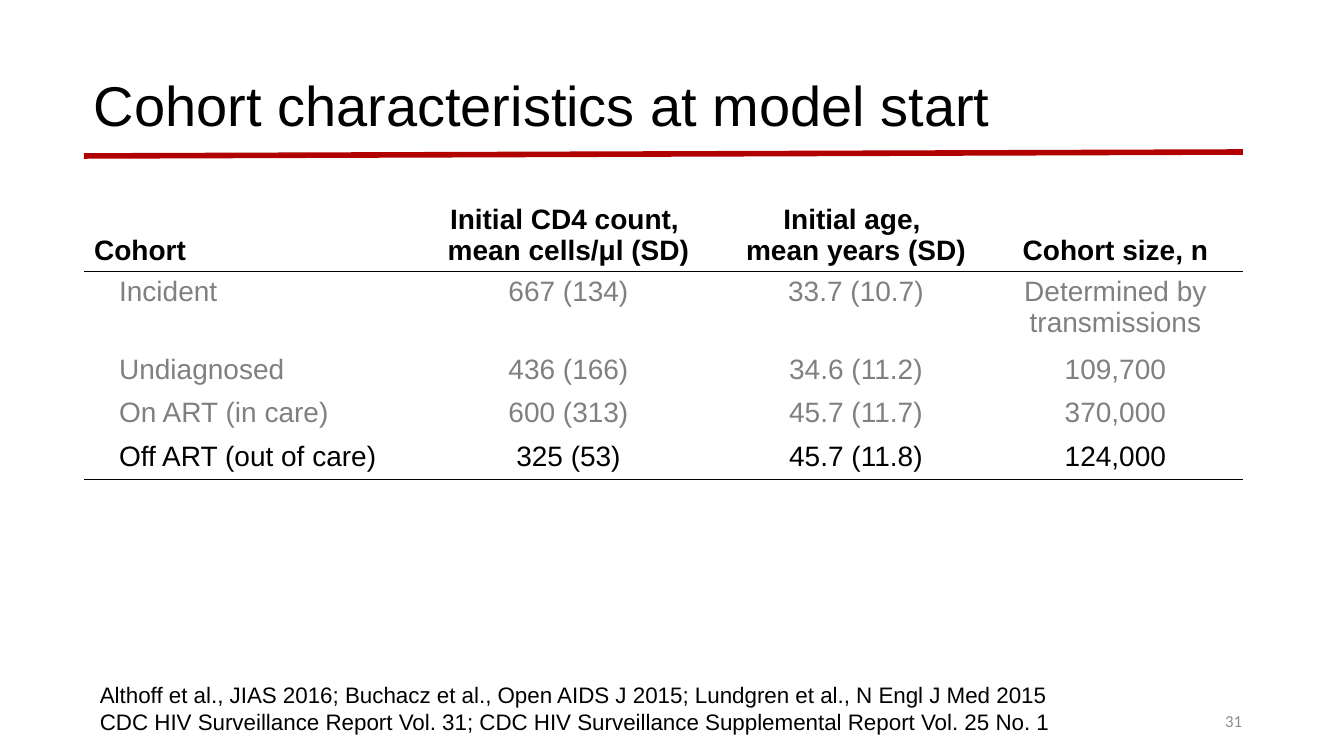
from lxml import etree
from pptx import Presentation
from pptx.dml.color import RGBColor
from pptx.enum.shapes import MSO_CONNECTOR
from pptx.enum.text import MSO_ANCHOR, PP_ALIGN
from pptx.oxml.ns import qn
from pptx.util import Pt

LEFT, CENTER, RIGHT = PP_ALIGN.LEFT, PP_ALIGN.CENTER, PP_ALIGN.RIGHT
TOP, MIDDLE, BOTTOM = MSO_ANCHOR.TOP, MSO_ANCHOR.MIDDLE, MSO_ANCHOR.BOTTOM
STRAIGHT = MSO_CONNECTOR.STRAIGHT
PX = 914400 / 100.8  # EMU in one px

THEME = {
    "font": "Arial", "number_font": "Calibri",
    "black": "000000", "muted": "808080", "number": "8C8C8C", "rule": "B00000",
    "title_size": 40, "table_size": 20, "source_size": 16, "number_size": 12,
}


def px(*lengths):
    return [round(length * PX) for length in lengths]


def write_text(frame, text, size, color=THEME["black"], font=THEME["font"],
               bold=False, align=LEFT, anchor=TOP, indent=0, spacing=None):
    frame.word_wrap = True
    frame.vertical_anchor = anchor
    for index, line in enumerate(text.split("\n")):
        paragraph = frame.paragraphs[0] if index == 0 else frame.add_paragraph()
        paragraph.alignment = align
        paragraph.line_spacing = spacing
        if indent:
            properties = paragraph._p.get_or_add_pPr()
            properties.set("marL", "0")
            properties.set("indent", str(px(indent)[0]))
        run = paragraph.add_run()
        run.text = line
        run.font.name, run.font.size, run.font.bold = font, Pt(size), bold
        run.font.color.rgb = RGBColor.from_string(color)


presentation = Presentation()
presentation.slide_width, presentation.slide_height = px(1344, 756)
slide = presentation.slides.add_slide(presentation.slide_layouts[6])
shapes = slide.shapes

# Slide number
number_box = shapes.add_textbox(*px(950, 701, 302, 40))
write_text(number_box.text_frame, "31", THEME["number_size"], color=THEME["number"],
           font=THEME["number_font"], align=RIGHT, anchor=MIDDLE)

# Cohort table
rows = [
    ("Cohort", "Initial CD4 count, \nmean cells/μl (SD)",
     "Initial age, \nmean years (SD)", "Cohort size, n"),
    ("Incident", "667 (134)", "33.7 (10.7)", "Determined by transmissions"),
    ("Undiagnosed", "436 (166)", "34.6 (11.2)", "109,700"),
    ("On ART (in care)", "600 (313)", "45.7 (11.7)", "370,000"),
    ("Off ART (out of care)", "325 (53)", "45.7 (11.8)", "124,000"),
]
column_widths = px(329, 311, 264, 255)
row_heights = px(72, 72, 41, 41, 41)
last_row = len(rows) - 1
table = shapes.add_table(len(rows), len(column_widths), *px(84, 194),
                         sum(column_widths), sum(row_heights)).table
table.first_row = table.horz_banding = False
for column, width in zip(table.columns, column_widths):
    column.width = width
for row, height in zip(table.rows, row_heights):
    row.height = height

for row_index, values in enumerate(rows):
    header = row_index == 0
    ruled_edges = {0: ["lnB"], 1: ["lnT"], last_row: ["lnB"]}.get(row_index, [])
    for column_index, value in enumerate(values):
        cell = table.cell(row_index, column_index)
        first = column_index == 0
        write_text(cell.text_frame, value, THEME["table_size"], bold=header,
                   color=THEME["black"] if row_index in (0, last_row) else THEME["muted"],
                   align=LEFT if first else CENTER,
                   indent=25 if first and not header else 0)
        cell.vertical_anchor = BOTTOM if header else TOP
        # Borders: one rule under the header and one under the last row
        cell_properties = cell._tc.get_or_add_tcPr()
        for edge in ("lnL", "lnR", "lnT", "lnB"):
            border = etree.SubElement(cell_properties, qn(f"a:{edge}"), w=str(Pt(1)))
            if edge in ruled_edges:
                fill = etree.SubElement(border, qn("a:solidFill"))
                etree.SubElement(fill, qn("a:srgbClr"), val=THEME["black"])
            else:
                etree.SubElement(border, qn("a:noFill"))
        cell.fill.background()

# Rule under the title
title_rule = shapes.add_connector(STRAIGHT, *px(84, 156, 1243, 152))
title_rule.line.color.rgb = RGBColor.from_string(THEME["rule"])
title_rule.line.width = Pt(4)
etree.SubElement(title_rule._element.spPr, qn("a:effectLst"))

# Title
title_box = shapes.add_textbox(*px(84, 35, 1214, 146))
write_text(title_box.text_frame, "Cohort characteristics at model start",
           THEME["title_size"], anchor=MIDDLE, spacing=0.9)

# Sources
source_box = shapes.add_textbox(*px(90, 676, 981, 92))
write_text(
    source_box.text_frame,
    "Althoff et al., JIAS 2016; Buchacz et al., Open AIDS J 2015; "
    "Lundgren et al., N Engl J Med 2015\n"
    "CDC HIV Surveillance Report Vol. 31; "
    "CDC HIV Surveillance Supplemental Report Vol. 25 No. 1",
    THEME["source_size"])

presentation.save("out.pptx")
